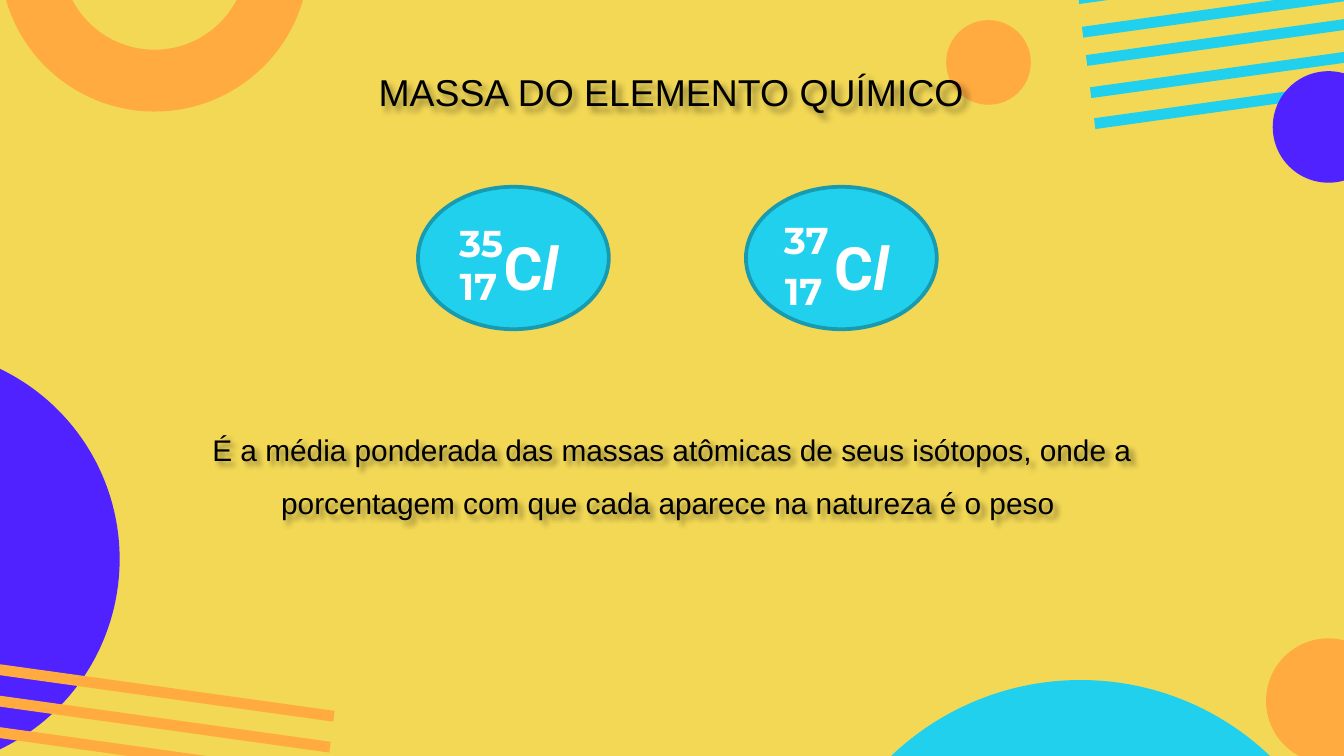
from dataclasses import dataclass

from pptx import Presentation
from pptx import oxml, util as u
from pptx.dml import color
from pptx.enum import shapes, text
from pptx.oxml import ns


@dataclass(frozen=True)
class Theme:
    """Colours, fonts and type sizes of the slide."""
    yellow: str = "F2D855"
    cyan: str = "20D0ED"
    teal: str = "189AAF"
    orange: str = "FFAB40"
    purple: str = "4F22FF"
    black: str = "000000"
    white: str = "FFFFFF"
    prose_font: str = "Arial"
    symbol_font: str = "Roboto"
    number_font: str = "Montserrat"
    title_size: int = 20
    body_size: int = 16
    symbol_size: int = 32
    number_size: int = 20


def rgb(value):
    """Return the colour object of a hex string."""
    return color.RGBColor.from_string(value)


def place(shape, left, top, width, height):
    """Set the position and size of a shape in inches."""
    shape.left, shape.top = u.Inches(left), u.Inches(top)
    shape.width, shape.height = u.Inches(width), u.Inches(height)


def add_run(paragraph, content, *, font, size, fill, bold=False, italic=False):
    """Add formatted text to a paragraph."""
    run = paragraph.add_run()
    run.text = content
    run.font.name, run.font.size = font, u.Pt(size)
    run.font.bold, run.font.italic = bold, italic
    run.font.color.rgb = rgb(fill)


def add_soft_shadow(shape):
    """Give the text of an unfilled shape a soft shadow."""
    shape.fill.background()
    shape.element.spPr.append(oxml.parse_xml(
        f'<a:effectLst {ns.nsdecls("a")}>'
        '<a:outerShdw blurRad="38100" dist="38100" dir="2700000" algn="tl" rotWithShape="0">'
        '<a:prstClr val="black"><a:alpha val="40000"/></a:prstClr>'
        '</a:outerShdw></a:effectLst>'))


class SlideBuilder:
    """Draws themed elements on one slide."""

    def __init__(self, slide, theme):
        """Keep the slide and theme and paint the background."""
        self.slide, self.theme = slide, theme
        slide.background.fill.solid()
        slide.background.fill.fore_color.rgb = rgb(theme.yellow)

    def paint(self, shape, fill):
        """Apply a flat fill without outline or shadow."""
        shape.shadow.inherit = False
        shape.fill.solid()
        shape.fill.fore_color.rgb = rgb(fill)
        shape.line.fill.background()

    def oval(self, left, top, width, height, fill):
        """Add a filled ellipse."""
        shape = self.slide.shapes.add_shape(
            shapes.MSO_SHAPE.OVAL, *map(u.Inches, (left, top, width, height)))
        self.paint(shape, fill)
        return shape

    def ring(self, center_x, center_y, radius, fill):
        """Add a ring around a centre."""
        shape = self.slide.shapes.add_shape(
            shapes.MSO_SHAPE.DONUT, *map(u.Inches, (
                center_x - radius, center_y - radius, 2 * radius, 2 * radius)))
        shape.adjustments[0] = 0.2
        self.paint(shape, fill)

    def stripe(self, left, top, run, rise, slant, fill):
        """Add a thin slanted bar."""
        corners = [
            (left, top),
            (left + run, top + rise),
            (left + run + slant, top + rise + 0.08),
            (left + slant, top + 0.08)]
        points = [(u.Inches(x), u.Inches(y)) for x, y in corners]
        builder = self.slide.shapes.build_freeform(*points[0])
        builder.add_line_segments(points[1:])
        self.paint(builder.convert_to_shape(), fill)

    def title(self, content):
        """Format the title placeholder and bring it to the front."""
        shape = self.slide.shapes.title
        place(shape, 1.13, 0.32, 7.73, 0.51)
        shape.text_frame.margin_bottom = 0
        self.prose(shape, content, self.theme.title_size)
        shape.element.getparent().append(shape.element)

    def body(self, content):
        """Add the explanatory text."""
        shape = self.slide.shapes.add_textbox(*map(u.Inches, (1.06, 3.04, 7.88, 0.87)))
        self.prose(shape, content, self.theme.body_size)

    def prose(self, shape, content, size):
        """Write centred text with a soft shadow."""
        frame = shape.text_frame
        frame.word_wrap = True
        frame.auto_size = text.MSO_AUTO_SIZE.SHAPE_TO_FIT_TEXT
        frame.vertical_anchor = text.MSO_ANCHOR.MIDDLE
        paragraph = frame.paragraphs[0]
        paragraph.alignment = text.PP_ALIGN.CENTER
        paragraph.line_spacing = 1.5
        paragraph.space_before = u.Pt(0)
        add_run(paragraph, content, font=self.theme.prose_font, size=size,
                fill=self.theme.black)
        add_soft_shadow(shape)

    def label(self, left, top, width, height):
        """Add an unwrapped text box and return its centred paragraph."""
        shape = self.slide.shapes.add_textbox(*map(u.Inches, (left, top, width, height)))
        shape.text_frame.word_wrap = False
        shape.text_frame.auto_size = text.MSO_AUTO_SIZE.SHAPE_TO_FIT_TEXT
        paragraph = shape.text_frame.paragraphs[0]
        paragraph.alignment = text.PP_ALIGN.CENTER
        return paragraph

    def isotope(self, left, symbol_left, number_left, mass, mass_top, number_top):
        """Add a chlorine isotope with its mass and atomic numbers."""
        theme = self.theme
        oval = self.oval(left, 1.39, 1.42, 1.06, theme.cyan)
        oval.line.color.rgb = rgb(theme.teal)
        oval.line.width = u.Pt(2)
        symbol = self.label(symbol_left, 1.67, 0.64, 0.64)
        for letter, italic in (("C", False), ("l", True)):
            add_run(symbol, letter, font=theme.symbol_font, size=theme.symbol_size,
                    fill=theme.white, bold=True, italic=italic)
        for content, offset, top in (("17", 0, number_top), (mass, 0.02, mass_top)):
            add_run(self.label(number_left + offset, top, 0.58, 0.44), content,
                    font=theme.number_font, size=theme.number_size,
                    fill=theme.white, bold=True)


def main():
    """Build and save the slide."""
    theme = Theme()
    presentation = Presentation()
    presentation.slide_width = u.Inches(10)
    presentation.slide_height = presentation.slide_width * 9 // 16
    slide = presentation.slides.add_slide(presentation.slide_layouts[5])
    builder = SlideBuilder(slide, theme)

    builder.ring(8.04, 7.1, 2.04, theme.cyan)
    builder.oval(7.04, 0.15, 0.63, 0.63, theme.orange)
    builder.oval(-2.25, 2.59, 3.14, 3.14, theme.purple)
    builder.ring(1.15, -0.32, 1.15, theme.orange)
    for index, top in enumerate((-0.05, 0.2, 0.41, 0.65, 0.88)):
        builder.stripe(8.02 + 0.03 * index, top, 2.44, -0.34, 0.01, theme.cyan)
    for index in range(3):
        builder.stripe(-0.08 + 0.03 * index, 5.4 - 0.23 * index, 2.51, 0.35, -0.01,
                       theme.orange)
    builder.oval(9.47, 0.53, 0.83, 0.83, theme.purple)
    builder.oval(9.42, 4.75, 0.93, 0.93, theme.orange)

    builder.title("MASSA DO ELEMENTO QUÍMICO")
    builder.body("É a média ponderada das massas atômicas de seus isótopos, onde a "
                 "porcentagem com que cada aparece na natureza é o peso ")
    builder.isotope(3.11, 3.63, 3.27, "35", mass_top=1.59, number_top=1.91)
    builder.isotope(5.55, 6.09, 5.69, "37", mass_top=1.57, number_top=1.95)
    presentation.save("out.pptx")


if __name__ == "__main__":
    main()
